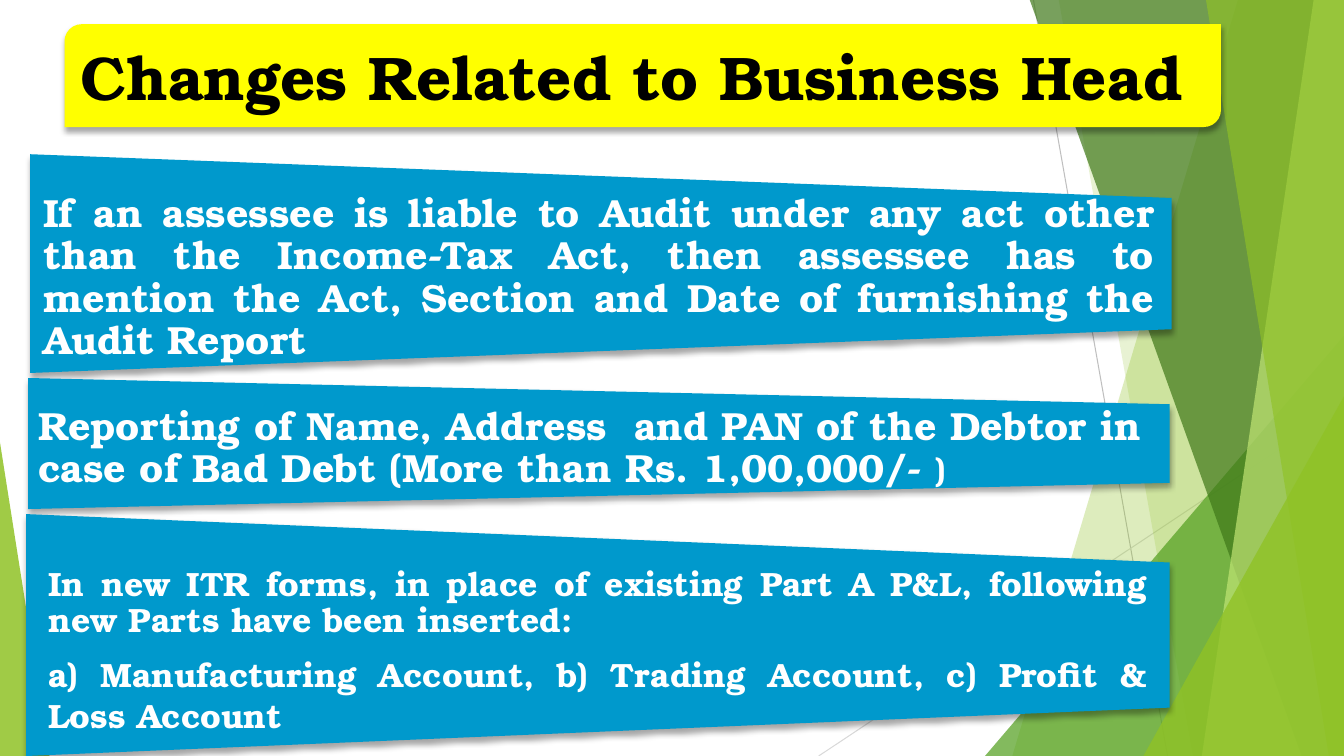
from dataclasses import dataclass

from lxml import etree
from pptx import Presentation
from pptx.dml.color import RGBColor
from pptx.enum.shapes import MSO_CONNECTOR, MSO_SHAPE
from pptx.enum.text import MSO_ANCHOR, MSO_AUTO_SIZE, PP_ALIGN
from pptx.oxml.ns import qn
from pptx.util import Inches, Pt

TRIANGLE = MSO_SHAPE.ISOSCELES_TRIANGLE
TRAPEZOID = MSO_SHAPE.FLOWCHART_MANUAL_OPERATION
BANNER = MSO_SHAPE.ROUND_2_DIAG_RECTANGLE
STRAIGHT = MSO_CONNECTOR.STRAIGHT
TOP, MIDDLE = MSO_ANCHOR.TOP, MSO_ANCHOR.MIDDLE
CENTER, JUSTIFY = PP_ALIGN.CENTER, PP_ALIGN.JUSTIFY
NO_FIT = MSO_AUTO_SIZE.NONE

W, H = 13.33, 7.5
FACET_TOP = -0.01
FONT = "TeX Gyre Bonum"
BLUE, YELLOW, WHITE, BLACK = "0099CC", "FFFF00", "FFFFFF", "000000"
GREEN = "90C226"


@dataclass
class Ray:
    start: tuple[float, float]
    end: tuple[float, float]
    color: str


@dataclass
class Facet:
    """Full-height facet that reaches the right edge of the slide."""
    top_x: float
    bottom_x: float
    color: str
    alpha: int


@dataclass
class Corner:
    box: tuple[float, float, float, float]
    apex: int
    color: str
    alpha: int


@dataclass
class Panel:
    """Blue panel, tall on the left; box as it appears on the slide."""
    box: tuple[float, float, float, float]


@dataclass
class Note:
    box: tuple[float, float, float, float]
    insets: tuple[float, float]
    anchor: MSO_ANCHOR
    # each paragraph: line spacing and its (text, size) runs
    paragraphs: list[tuple[float, list[tuple[str, int]]]]


RAYS = [Ray((10.25, 0), (11.58, H), "BFBFBF"), Ray((W, 4.03), (8.12, H), "D9D9D9")]
DECOR = [
    Facet(12.28, 10.04, GREEN, 30),
    Facet(10.5, 11.83, GREEN, 20),
    Corner((9.77, 3.33, 3.56, 4.17), 1, "54A021", 72),
    Facet(10.21, 12.91, "3F7819", 70),
    Facet(13.03, 11.92, "C0E474", 70),
    Facet(11.96, 13.18, GREEN, 65),
    Corner((11.34, 3.93, 1.99, 3.57), 1, GREEN, 80),
    Corner((0, 4.39, 0.49, 3.11), 0, GREEN, 85),
]
BANNER_BOX = (0.64, 0.24, 11.47, 1.02)
PANELS = [
    Panel((0.3, 1.53, 11.32, 2.17)),
    Panel((0.28, 3.75, 11.32, 1.3)),
    Panel((0.26, 5.1, 11.34, 2.4)),
]
NOTES = [
    Note((0.37, 2.01, 11.14, 1.5), (0.06, 0.06), MIDDLE, [
        (0.9, [("If an assessee is liable to Audit under any act other than the "
                "Income-Tax Act, then assessee has to mention the Act, Section "
                "and Date of furnishing the Audit Report", 28)])]),
    Note((0.28, 3.98, 11.14, 0.95), (0.1, 0.05), TOP, [
        (0.9, [("Reporting of Name, Address  and PAN of the Debtor in case of "
                "Bad Debt (More than Rs. 1,00,000/- ", 28), (")", 24)])]),
    Note((0.36, 5.5, 11.14, 1.92), (0.12, 0), MIDDLE, [
        (0.9, [("In new ITR forms, in place of existing Part A P&L, following "
                "new Parts have been inserted: ", 24)]),
        (1.0, [("a) Manufacturing Account, b) Trading Account, "
                "c) Profit & Loss Account ", 24)])]),
]


def rgb(value: str) -> RGBColor:
    return RGBColor.from_string(value)


def inches(values) -> list:
    return [Inches(v) for v in values]


def apply(target, formats: dict) -> None:
    for name, value in formats.items():
        setattr(target, name, value)


def paint(sp, color: str, alpha: int = 100) -> None:
    sp.shadow.inherit = False
    sp.line.fill.background()
    sp.fill.solid()
    sp.fill.fore_color.rgb = rgb(color)
    if alpha < 100:
        clr = sp.fill._xPr.find(f".//{qn('a:srgbClr')}")
        etree.SubElement(clr, qn("a:alpha")).set("val", str(alpha * 1000))


def drop_shadow(sp) -> None:
    effects = sp._element.spPr.find(qn("a:effectLst"))
    shadow = etree.SubElement(effects, qn("a:outerShdw"), blurRad=str(Pt(4)),
                              dist=str(Pt(3)), dir="5400000", rotWithShape="0")
    clr = etree.SubElement(shadow, qn("a:srgbClr"), val=BLACK)
    etree.SubElement(clr, qn("a:alpha"), val="35000")


def draw_ray(shapes, ray: Ray) -> None:
    line = shapes.add_connector(STRAIGHT, *inches(ray.start + ray.end))
    line.line.color.rgb = rgb(ray.color)
    line.line.width = Pt(0.75)
    etree.SubElement(line._element.spPr, qn("a:effectLst"))


def draw_decor(shapes, item: Facet | Corner) -> None:
    if isinstance(item, Facet):
        fb = shapes.build_freeform(Inches(item.top_x), Inches(FACET_TOP))
        outline = [(W, FACET_TOP), (W, H), (item.bottom_x, H)]
        fb.add_line_segments([inches(pt) for pt in outline], close=True)
        sp = fb.convert_to_shape()
    else:
        sp = shapes.add_shape(TRIANGLE, *inches(item.box))
        sp.adjustments[0] = item.apex
    paint(sp, item.color, item.alpha)


def draw_panel(shapes, panel: Panel) -> None:
    x, y, w, h = panel.box
    # the frame is turned a quarter, so width and height swap about the centre
    frame = (x + (w - h) / 2, y + (h - w) / 2, h, w)
    sp = shapes.add_shape(TRAPEZOID, *inches(frame))
    sp.rotation = 270
    paint(sp, BLUE)
    drop_shadow(sp)


def add_run(p, text: str, size: int, color: str) -> None:
    r = p.add_run()
    r.text = text
    apply(r.font, {"name": FONT, "size": Pt(size), "bold": True})
    r.font.color.rgb = rgb(color)


def draw_title(slide) -> None:
    sp = slide.shapes.add_shape(BANNER, *inches(BANNER_BOX))
    paint(sp, YELLOW)
    drop_shadow(sp)
    title = slide.shapes.title
    slide.shapes._spTree.append(title._element)  # in front of the banner
    left, top, width, height = inches(BANNER_BOX)
    apply(title, {"left": left, "top": top, "width": width, "height": height})
    tf = title.text_frame
    apply(tf, {"word_wrap": True, "auto_size": NO_FIT, "vertical_anchor": MIDDLE})
    p = tf.paragraphs[0]
    p.alignment = CENTER
    add_run(p, "Changes Related to Business Head ", 44, BLACK)


def draw_note(shapes, note: Note) -> None:
    tf = shapes.add_textbox(*inches(note.box)).text_frame
    side, edge = inches(note.insets)
    apply(tf, {"word_wrap": True, "auto_size": NO_FIT, "vertical_anchor": note.anchor,
               "margin_left": side, "margin_right": side,
               "margin_top": edge, "margin_bottom": edge})
    for i, (spacing, runs) in enumerate(note.paragraphs):
        p = tf.add_paragraph() if i else tf.paragraphs[0]
        apply(p, {"alignment": JUSTIFY, "line_spacing": spacing, "space_after": Pt(10)})
        for text, size in runs:
            add_run(p, text, size, WHITE)


def main() -> None:
    prs = Presentation()
    apply(prs, {"slide_width": Inches(W), "slide_height": Inches(H)})
    slide = prs.slides.add_slide(prs.slide_layouts.get_by_name("Title Only"))
    # Background facets
    for ray in RAYS:
        draw_ray(slide.shapes, ray)
    for item in DECOR:
        draw_decor(slide.shapes, item)
    # Title banner, panels and their text
    draw_title(slide)
    for panel in PANELS:
        draw_panel(slide.shapes, panel)
    for note in NOTES:
        draw_note(slide.shapes, note)
    prs.save("out.pptx")


if __name__ == "__main__":
    main()
